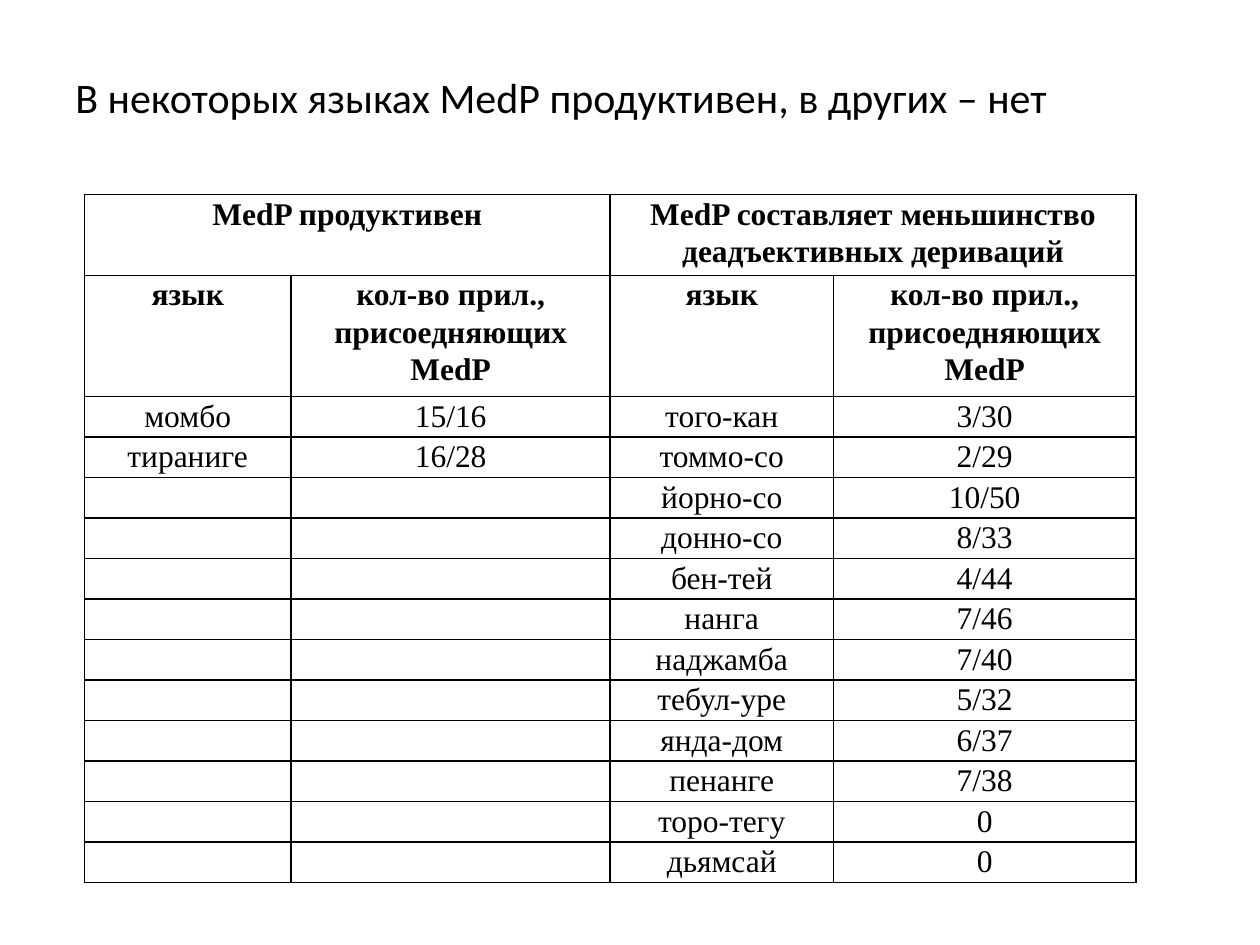
from lxml import etree
from pptx import Presentation, util as u
from pptx.dml.color import RGBColor
from pptx.enum import text
from pptx.oxml.ns import qn

COLORS = {"ink": "000000"}
TITLE_FONT = {"name": "Calibri", "size": u.Pt(24), "bold": False}
HEAD_FONT = {"name": "Times New Roman", "size": u.Pt(18), "bold": True}
BODY_FONT = {**HEAD_FONT, "bold": False}
MARGINS = {"margin_left": u.Cm(0.18), "margin_right": u.Cm(0.18),
           "margin_top": 0, "margin_bottom": 0}

COL_WIDTHS = [4.17, 6.43, 4.5, 6.1]
HEAD_HEIGHTS = [1.52, 2.26]
BODY_HEIGHTS = [0.76] * 2 + [0.78] * 4 + [0.76] * 4 + [0.78] * 2
GROUPS = ["MedP продуктивен", "MedP составляет меньшинство деадъективных дериваций"]
HEADINGS = ["язык", "кол-во прил., присоедняющих MedP"]
PRODUCTIVE = [("момбо", "15/16"), ("тираниге", "16/28")]
MINORITY = [
    ("того-кан", "3/30"), ("томмо-со", "2/29"), ("йорно-со", "10/50"),
    ("донно-со", "8/33"), ("бен-тей", "4/44"), ("нанга", "7/46"),
    ("наджамба", "7/40"), ("тебул-уре", "5/32"), ("янда-дом", "6/37"),
    ("пенанге", "7/38"), ("торо-тегу", "0"), ("дьямсай", "0"),
]


def set_attrs(obj, values):
    for name, value in values.items():
        setattr(obj, name, value)


def add_run(p, words, font):
    r = p.add_run()
    r.text = words
    set_attrs(r.font, font)
    r.font.color.rgb = RGBColor.from_string(COLORS["ink"])


def add_borders(cell):
    tc_pr = cell._tc.get_or_add_tcPr()
    for i, side in enumerate(("lnL", "lnR", "lnT", "lnB")):
        ln = etree.Element(qn(f"a:{side}"), w=str(u.Pt(1)))
        fill = etree.SubElement(ln, qn("a:solidFill"))
        etree.SubElement(fill, qn("a:srgbClr"), val=COLORS["ink"])
        tc_pr.insert(i, ln)  # borders come before the fill


def add_title(slide, left, top, width, height):
    tf = slide.shapes.add_textbox(left, top, width, height).text_frame
    tf.word_wrap = True
    p = tf.paragraphs[0]
    # Hanging indent
    indent = u.Cm(0.95)
    p_pr = p._p.get_or_add_pPr()
    p_pr.set("marL", str(indent))
    p_pr.set("indent", str(-indent))
    add_run(p, "В некоторых языках MedP продуктивен, в других – нет", TITLE_FONT)


def add_language_table(slide, left, top):
    # Both language lists side by side, the shorter one padded
    padding = [("", "")] * (len(MINORITY) - len(PRODUCTIVE))
    rows = [[GROUPS[0], "", GROUPS[1], ""], HEADINGS * 2]
    rows += [[*a, *b] for a, b in zip(PRODUCTIVE + padding, MINORITY)]
    heights = HEAD_HEIGHTS + BODY_HEIGHTS
    table = slide.shapes.add_table(
        len(rows), len(COL_WIDTHS), left, top,
        u.Cm(sum(COL_WIDTHS)), u.Cm(sum(heights))).table
    set_attrs(table, {"first_row": False, "horz_banding": False})
    for col, width in zip(table.columns, COL_WIDTHS):
        col.width = u.Cm(width)
    for row, height in zip(table.rows, heights):
        row.height = u.Cm(height)

    # Group headings span two columns each
    for c in (0, 2):
        table.cell(0, c).merge(table.cell(0, c + 1))

    for i, values in enumerate(rows):
        font = HEAD_FONT if i < len(HEAD_HEIGHTS) else BODY_FONT
        for j, words in enumerate(values):
            cell = table.cell(i, j)
            set_attrs(cell, MARGINS)
            cell.fill.background()
            add_borders(cell)
            p = cell.text_frame.paragraphs[0]
            if words:
                set_attrs(p, {"alignment": text.PP_ALIGN.CENTER, "line_spacing": 1.07})
                add_run(p, words, font)
            else:
                # Small type keeps empty cells from stretching their row
                etree.SubElement(p._p, qn("a:endParaRPr"), sz="1200")


def main():
    prs = Presentation()
    set_attrs(prs, {"slide_width": u.Cm(25.4), "slide_height": u.Cm(19.05)})
    slide = prs.slides.add_slide(prs.slide_layouts[6])
    add_title(slide, u.Cm(1.27), u.Cm(1.32), u.Cm(22.86), u.Cm(15.7))
    add_language_table(slide, u.Cm(1.7), u.Cm(3.92))
    prs.save("out.pptx")


if __name__ == "__main__":
    main()
